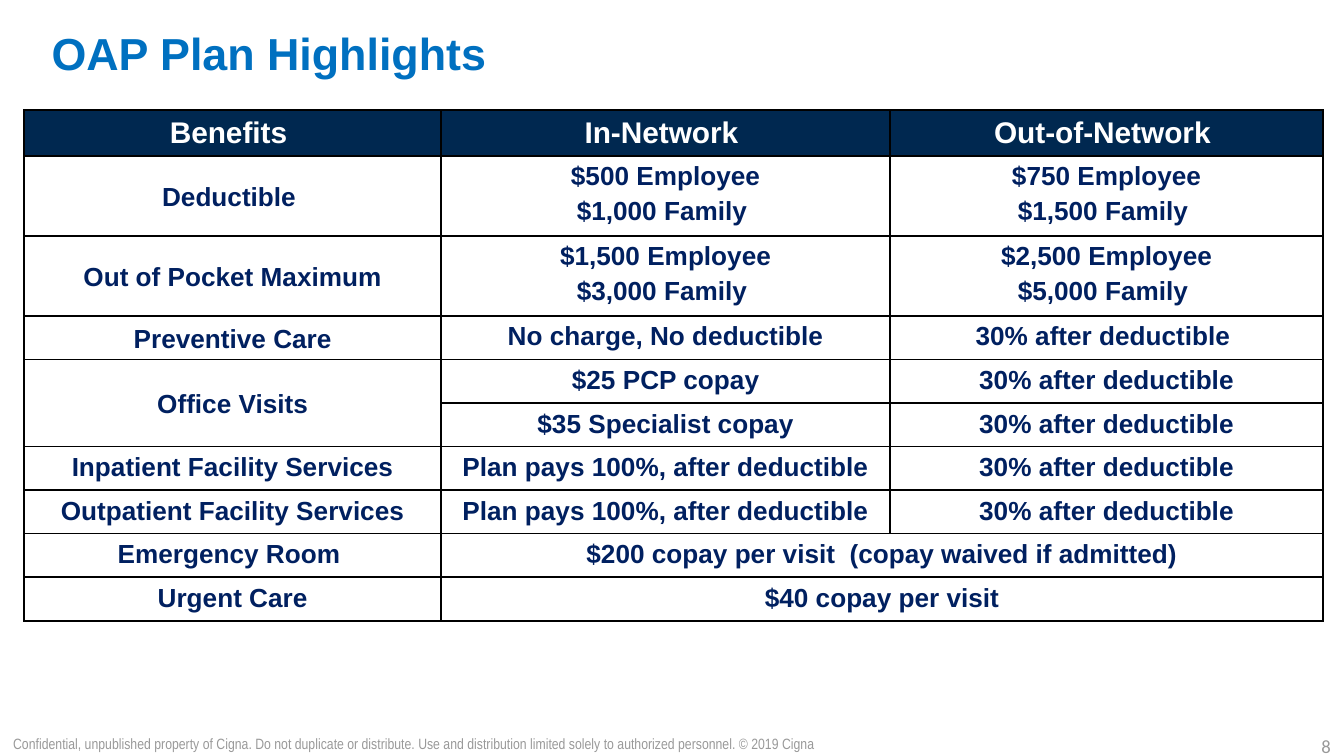
from lxml import etree
from pptx import Presentation
from pptx.dml.color import RGBColor
from pptx.enum.text import MSO_ANCHOR, MSO_AUTO_SIZE, PP_ALIGN
from pptx.oxml.ns import qn
from pptx.util import Pt

LEFT, CENTER, RIGHT = PP_ALIGN.LEFT, PP_ALIGN.CENTER, PP_ALIGN.RIGHT
TOP, MIDDLE = MSO_ANCHOR.TOP, MSO_ANCHOR.MIDDLE
NO_AUTOSIZE = MSO_AUTO_SIZE.NONE
TITLE_ONLY = 5

TITLE_FORMAT = {"name": "Arial", "size": Pt(24), "bold": True}
HEADER_FORMAT = {"name": "Arial", "size": Pt(16), "bold": True}
BODY_FORMAT = {"name": "Arial", "size": Pt(14), "bold": True}
NOTICE_FORMAT = {"name": "Arial Narrow", "size": Pt(8)}
NUMBER_FORMAT = {"name": "Calibri", "size": Pt(10)}
CELL_MARGINS = {"margin_top": Pt(3.4), "margin_bottom": Pt(1.8)}

NOTICE = (
    "Confidential, unpublished property of Cigna. Do not duplicate or distribute. "
    "Use and distribution limited solely to authorized personnel. © 2019 Cigna"
)
AFTER_DEDUCTIBLE = "30% after deductible"
PLAN_PAYS = "Plan pays 100%, after deductible"
BENEFITS = [
    ("Benefits ", "In-Network ", "Out-of-Network "),
    ("Deductible ", "$500 Employee\n$1,000 Family ", "$750 Employee\n$1,500 Family "),
    ("Out of Pocket Maximum", "$1,500 Employee\n$3,000 Family ", "$2,500 Employee\n$5,000 Family "),
    ("Preventive Care", "No charge, No deductible", "30% after deductible "),
    ("Office Visits", "$25 PCP copay", AFTER_DEDUCTIBLE),
    (None, "$35 Specialist copay", AFTER_DEDUCTIBLE),
    ("Inpatient Facility Services", PLAN_PAYS, AFTER_DEDUCTIBLE),
    ("Outpatient Facility Services", PLAN_PAYS, AFTER_DEDUCTIBLE),
    ("Emergency Room ", "$200 copay per visit  (copay waived if admitted)", None),
    ("Urgent Care", "$40 copay per visit", None),
]
COLUMN_SHARES = (3.1, 3.34, 3.22)
HEADER_HEIGHT, SINGLE_HEIGHT, DOUBLE_HEIGHT = 24.6, 23.35, 42.9
MIDDLE_LABEL_ROWS = range(1, 6)
MERGES = [((4, 0), (5, 0)), ((8, 1), (8, 2)), ((9, 1), (9, 2))]


def color(value):
    return RGBColor.from_string(value)


def apply(target, formats):
    for name, value in formats.items():
        setattr(target, name, value)


def write(frame, text, formats, ink, align):
    for index, line in enumerate(text.split("\n")):
        para = frame.add_paragraph() if index else frame.paragraphs[0]
        para.alignment = align
        if index:
            para.space_before = Pt(2.8)
        span = para.add_run()
        span.text = line
        apply(span.font, formats)
        span.font.color.rgb = color(ink)


def place_title(page, left, top, width, height):
    title = page.shapes.title
    title.left, title.top, title.width, title.height = map(Pt, (left, top, width, height))
    frame = title.text_frame
    frame.auto_size = NO_AUTOSIZE
    frame.vertical_anchor = MIDDLE
    write(frame, "OAP Plan Highlights", TITLE_FORMAT, "0070C0", LEFT)


def place_footer_text(page, text, formats, align, left, top, width, height):
    box = page.shapes.add_textbox(Pt(left), Pt(top), Pt(width), Pt(height))
    frame = box.text_frame
    frame.word_wrap = True
    frame.vertical_anchor = TOP
    write(frame, text, formats, "999999", align)


def add_borders(cell):
    properties = cell._tc.get_or_add_tcPr()
    for index, side in enumerate(("lnL", "lnR", "lnT", "lnB")):
        line = etree.Element(qn("a:" + side), w=str(Pt(1)))
        fill = etree.SubElement(line, qn("a:solidFill"))
        etree.SubElement(fill, qn("a:srgbClr"), val="000000")
        properties.insert(index, line)


def row_height(index, row):
    if index == 0:
        return HEADER_HEIGHT
    return DOUBLE_HEIGHT if "\n" in row[1] else SINGLE_HEIGHT


def place_benefits(page, left, top, width):
    heights = [row_height(index, row) for index, row in enumerate(BENEFITS)]
    graphic = page.shapes.add_table(
        len(BENEFITS), len(COLUMN_SHARES), Pt(left), Pt(top), Pt(width), Pt(sum(heights))
    )
    table = graphic.table
    for column, share in zip(table.columns, COLUMN_SHARES):
        column.width = Pt(width * share / sum(COLUMN_SHARES))
    for row, height in zip(table.rows, heights):
        row.height = Pt(height)
    for row_index, row in enumerate(BENEFITS):
        is_header = row_index == 0
        formats = HEADER_FORMAT if is_header else BODY_FORMAT
        for column_index, text in enumerate(row):
            cell = table.cell(row_index, column_index)
            cell.fill.solid()
            cell.fill.fore_color.rgb = color("002850" if is_header else "FFFFFF")
            is_middle = column_index == 0 and row_index in MIDDLE_LABEL_ROWS
            cell.vertical_anchor = MIDDLE if is_middle else TOP
            apply(cell, CELL_MARGINS)
            add_borders(cell)
            if text:
                write(cell.text_frame, text, formats, "FFFFFF" if is_header else "002060", CENTER)
            else:
                cell.text_frame.paragraphs[0].font.size = Pt(14)
    for first, last in MERGES:
        table.cell(*first).merge(table.cell(*last))


def main():
    deck = Presentation()
    deck.slide_width, deck.slide_height = Pt(720), Pt(405)
    page = deck.slides.add_slide(deck.slide_layouts[TITLE_ONLY])
    place_title(page, 20.4, 9, 661.7, 38.2)
    place_footer_text(page, "8", NUMBER_FORMAT, RIGHT, 552.2, 390.2, 167.8, 12.2)
    place_footer_text(page, NOTICE, NOTICE_FORMAT, LEFT, 0, 389.8, 552.2, 13.7)
    place_benefits(page, 13, 58.9, 695.8)
    deck.save("out.pptx")


if __name__ == "__main__":
    main()
